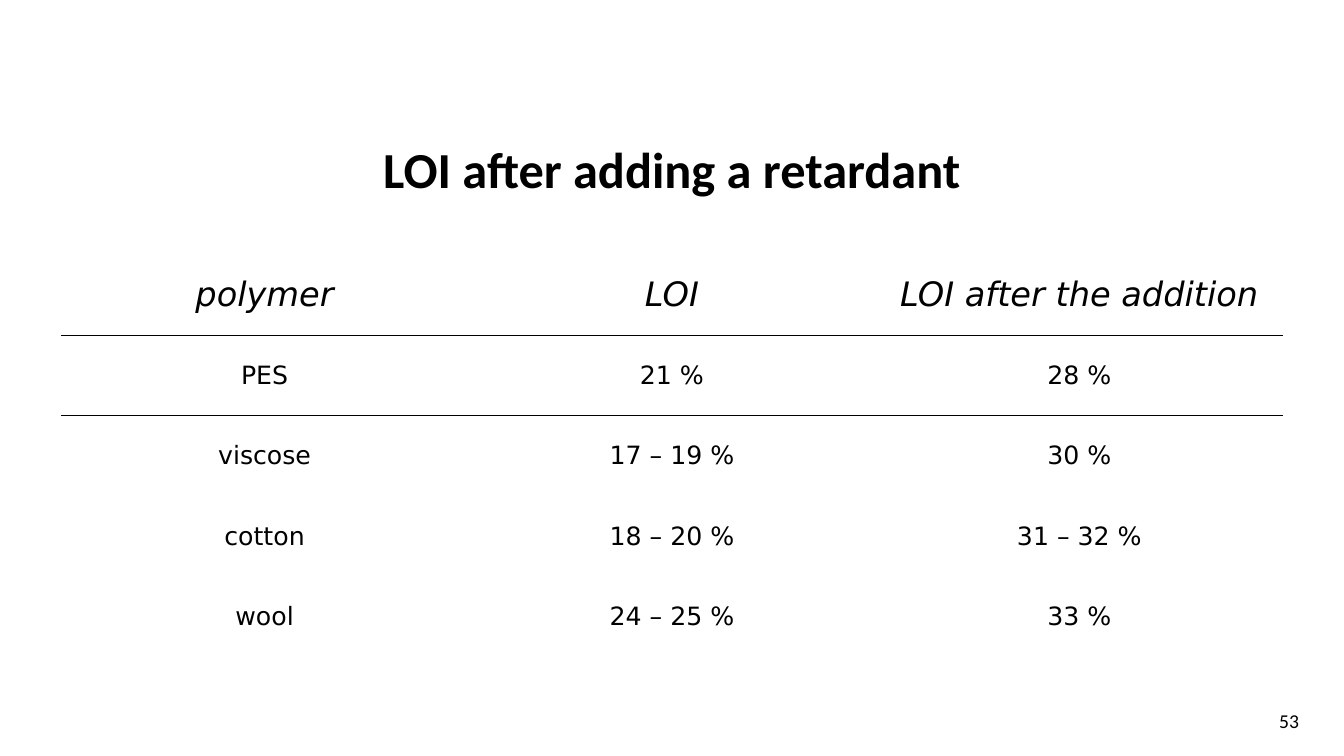
from pptx import Presentation
from pptx.dml.color import RGBColor
from pptx.enum.text import MSO_ANCHOR, PP_ALIGN
from pptx.oxml import parse_xml
from pptx.oxml.ns import nsdecls
from pptx.util import Pt

NO_STYLE = "{2D5ABB26-0587-4C30-8999-92F81FD0307C}"
ROWS = [
    ("polymer", "LOI", "LOI after the addition"),
    ("PES", "21 %", "28 %"),
    ("viscose", "17 – 19 %", "30 %"),
    ("cotton", "18 – 20 %", "31 – 32 %"),
    ("wool", "24 – 25 %", "33 %"),
]
RULED_ROWS = (0, 1)


def color(hex_value):
    return RGBColor.from_string(hex_value)


class Deck:
    ink = "000000"
    heading_font = "Calibri"
    table_font = "DejaVu Sans"

    def __init__(self, width, height):
        self.prs = Presentation()
        self.prs.slide_width, self.prs.slide_height = Pt(width), Pt(height)
        self.s = self.prs.slides.add_slide(self.prs.slide_layouts[5])

    def set_text(self, tf, text, font, size, bold=False, italic=False):
        p = tf.paragraphs[0]
        p.text = text
        p.alignment = PP_ALIGN.CENTER
        p.font.name, p.font.size = font, Pt(size)
        p.font.bold, p.font.italic = bold, italic
        p.font.color.rgb = color(self.ink)
        return p

    def title(self, text, left, top, width, height):
        sp = self.s.shapes.title
        sp.left, sp.top, sp.width, sp.height = map(Pt, (left, top, width, height))
        sp.text_frame.vertical_anchor = MSO_ANCHOR.MIDDLE
        p = self.set_text(sp.text_frame, text, self.heading_font, 36, bold=True)
        p.line_spacing = 0.9

    def page_number(self, text, left, top, width, height):
        sp = self.s.shapes.add_textbox(*map(Pt, (left, top, width, height)))
        sp.text_frame.word_wrap = True
        sp.text_frame.vertical_anchor = MSO_ANCHOR.MIDDLE
        self.set_text(sp.text_frame, text, self.heading_font, 14)

    def rule_below(self, cell):
        cell._tc.get_or_add_tcPr().append(parse_xml(
            f'<a:lnB {nsdecls("a")} w="{Pt(1)}"><a:solidFill>'
            f'<a:srgbClr val="{self.ink}"/></a:solidFill></a:lnB>'))

    def table(self, rows, left, top, col_width, row_height):
        cols = len(rows[0])
        table = self.s.shapes.add_table(
            len(rows), cols, Pt(left), Pt(top),
            Pt(col_width * cols), Pt(row_height * len(rows))).table
        table.first_row = table.horz_banding = False
        table._tbl.tblPr.find("{*}tableStyleId").text = NO_STYLE
        for r, values in enumerate(rows):
            for c, text in enumerate(values):
                cell = table.cell(r, c)
                cell.vertical_anchor = MSO_ANCHOR.MIDDLE
                self.set_text(cell.text_frame, text, self.table_font,
                              18 if r else 24, italic=r == 0)
                if r in RULED_ROWS:
                    self.rule_below(cell)
                cell.fill.background()


def main():
    deck = Deck(960, 540)
    deck.page_number("53", 900.5, 500.5, 40.5, 29)
    deck.title("LOI after adding a retardant", 66, 71, 828, 104.5)
    deck.table(ROWS, 43.5, 182, 291, 57.5)
    deck.prs.save("out.pptx")


if __name__ == "__main__":
    main()
